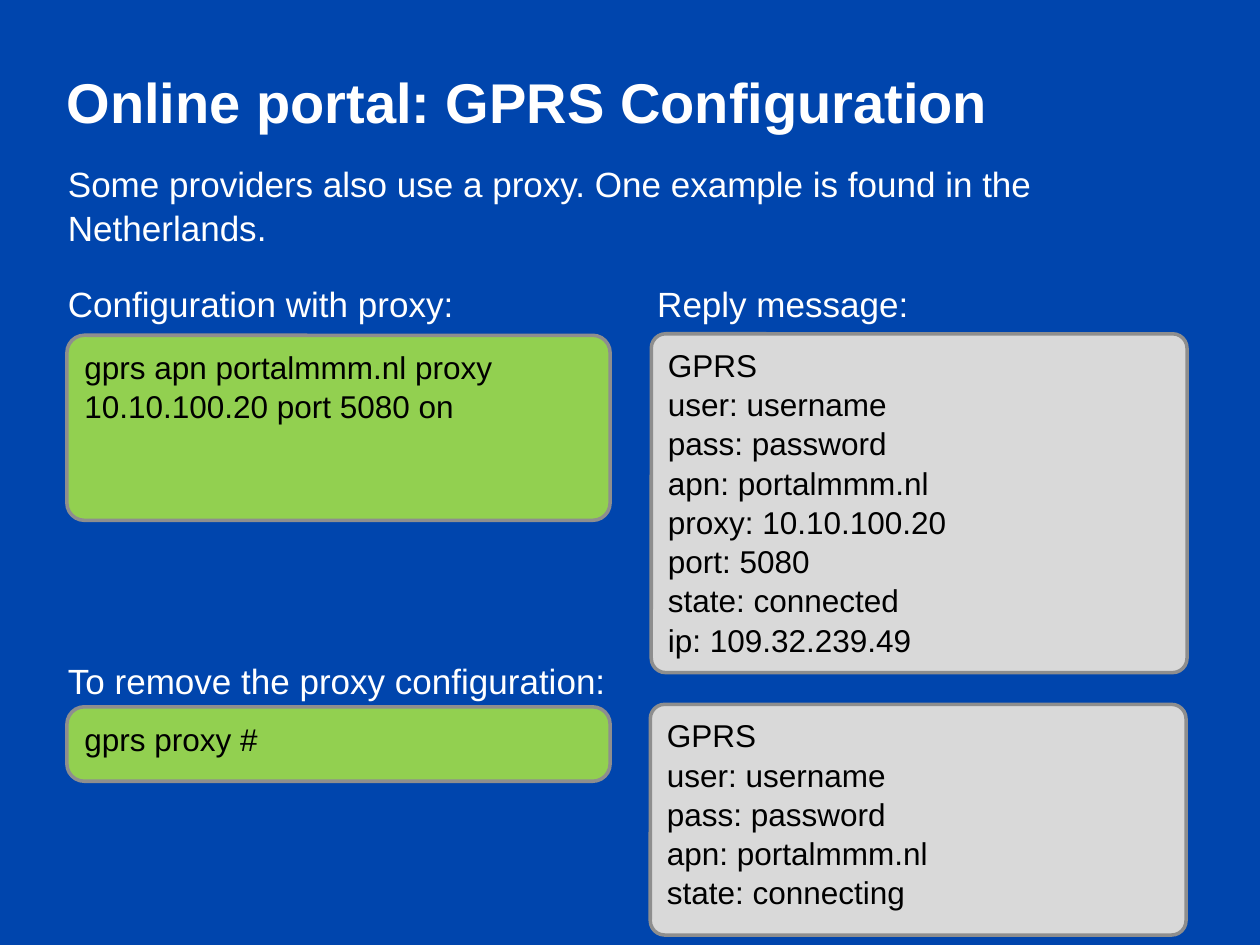
from pptx import Presentation, util as u
from pptx.dml import color
from pptx.enum import shapes, text

WHITE, BLACK, BLUE = "FFFFFF", "000000", "0045AD"
GREEN, LIGHT_GREY, GREY = "92D050", "D9D9D9", "8E8E8E"
FONT = "Arial"
LINE_SPACING = 1.04


def rgb(value):
    return color.RGBColor.from_string(value)


def place(shape, box):
    shape.left, shape.top, shape.width, shape.height = map(u.Cm, box)


def write(shape, lines, size, hue, anchor=text.MSO_ANCHOR.TOP, bold=False, spacing=LINE_SPACING):
    frame = shape.text_frame
    frame.text = "\n".join(lines)
    frame.word_wrap = True
    frame.auto_size = text.MSO_AUTO_SIZE.NONE
    frame.vertical_anchor = anchor
    for paragraph in frame.paragraphs:
        paragraph.alignment = text.PP_ALIGN.LEFT
        paragraph.line_spacing = spacing
        for run in paragraph.runs:
            run.font.name = FONT
            run.font.size = u.Pt(size)
            run.font.bold = bold
            run.font.color.rgb = rgb(hue)


def add_title(slide, box, title):
    place(slide.shapes.title, box)
    write(slide.shapes.title, [title], 32, WHITE, text.MSO_ANCHOR.MIDDLE, True, 1.0)


def add_caption(slide, box, caption):
    shape = slide.shapes.add_textbox(*map(u.Cm, box))
    write(shape, [caption], 20, WHITE)


def add_message(slide, box, lines, fill, radius):
    shape = slide.shapes.add_shape(shapes.MSO_SHAPE.ROUNDED_RECTANGLE, *map(u.Cm, box))
    shape.adjustments[0] = radius / min(box[2:])
    shape.shadow.inherit = False
    shape.fill.solid()
    shape.fill.fore_color.rgb = rgb(fill)
    shape.line.color.rgb = rgb(GREY)
    shape.line.width = u.Pt(2)
    write(shape, lines, 18, BLACK)


def add_command(slide, box, caption, command, gap):
    left, top, width, height = box
    add_caption(slide, (left - 0.23, top - gap, 11.5, 1.5), caption)
    add_message(slide, box, [command], GREEN, 0.35)


def add_reply(slide, box, lines):
    add_message(slide, box, lines, LIGHT_GREY, 0.29)


def main():
    presentation = Presentation()
    presentation.slide_width, presentation.slide_height = u.Cm(25.4), u.Cm(19.05)
    slide = presentation.slides.add_slide(presentation.slide_layouts[5])
    slide.background.fill.solid()
    slide.background.fill.fore_color.rgb = rgb(BLUE)

    add_title(slide, (1.09, 0.71, 23.7, 2.64), "Online portal: GPRS Configuration")
    add_caption(slide, (1.12, 3.12, 23.44, 14.4),
                "Some providers also use a proxy. One example is found in the Netherlands.")
    add_command(slide, (1.35, 6.76, 10.95, 3.73), "Configuration with proxy:",
                "gprs apn portalmmm.nl proxy 10.10.100.20 port 5080 on", 1.22)
    add_command(slide, (1.35, 14.25, 10.95, 1.5), "To remove the proxy configuration:",
                "gprs proxy #", 1.12)

    account = ["GPRS", "user: username", "pass: password", "apn: portalmmm.nl"]
    add_caption(slide, (13, 5.54, 11.5, 1.65), "Reply message:")
    add_reply(slide, (13.13, 6.73, 10.8, 6.83),
              account + ["proxy: 10.10.100.20", "port: 5080",
                         "state: connected", "ip: 109.32.239.49"])
    add_reply(slide, (13.11, 14.2, 10.8, 4.65), account + ["state: connecting"])

    presentation.save("out.pptx")


if __name__ == "__main__":
    main()
